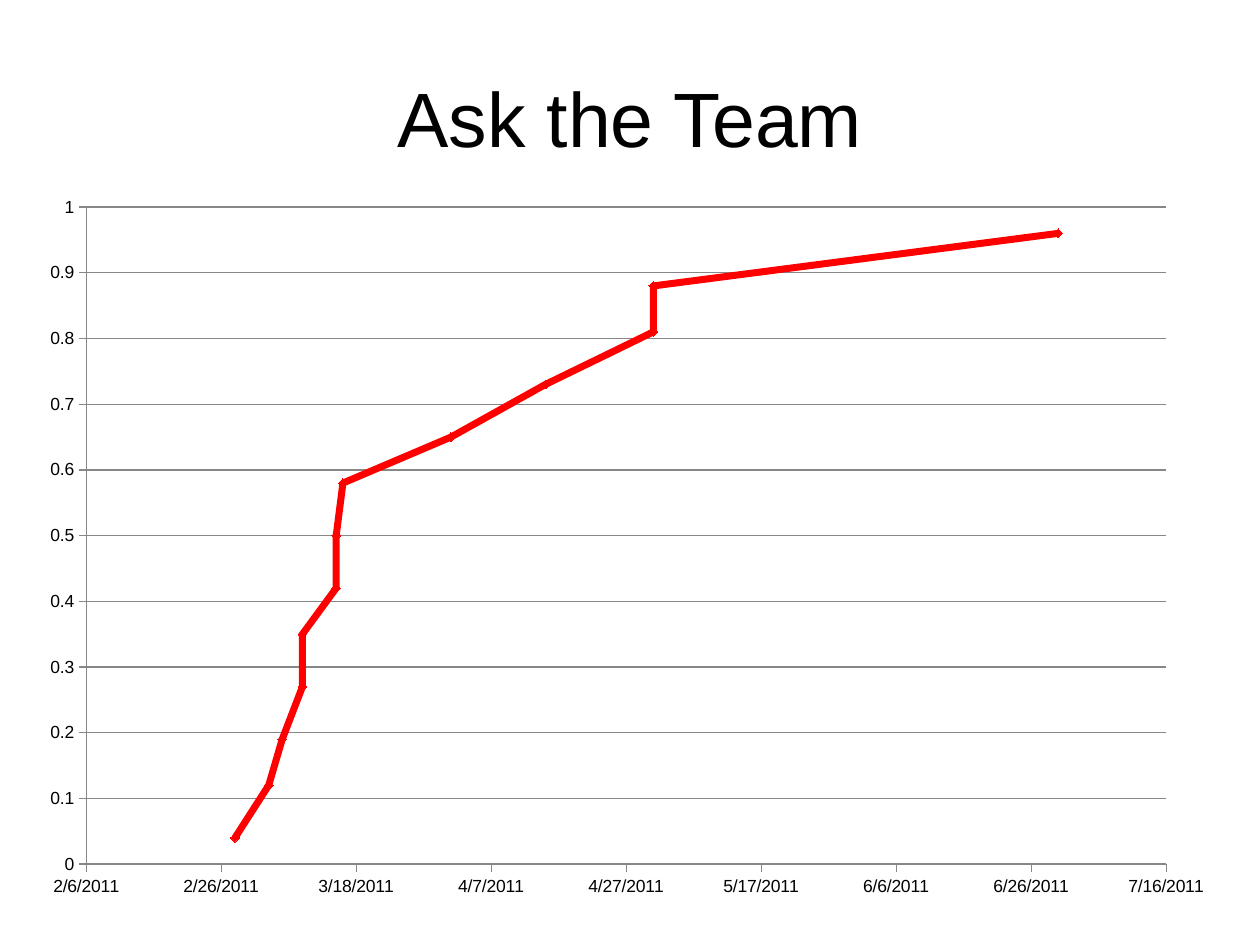
from lxml.etree import SubElement
from pptx import Presentation
from pptx.chart.data import XyChartData
from pptx.dml.color import RGBColor
from pptx.enum.chart import XL_CHART_TYPE as ChartType, XL_MARKER_STYLE as Marker
from pptx.enum.chart import XL_TICK_MARK as TickMark
from pptx.enum.text import MSO_ANCHOR as Anchor, PP_ALIGN as Align
from pptx.oxml.ns import qn
from pptx.util import Pt

# Content: days after the first date on the axis, share reached
TITLE = "Ask the Team"
FIRST_DATE = 40580  # 2/6/2011 as a date serial
DAYS_SHOWN, DAYS_PER_TICK = 160, 20
POINTS = [
    (22, 0.04), (27, 0.12), (29, 0.19), (32, 0.27), (32, 0.35),
    (37, 0.42), (37, 0.5), (38, 0.58), (54, 0.65), (68, 0.73),
    (84, 0.81), (84, 0.88), (144, 0.96),
]

THEME = {
    "font": "Arial",
    "title_size": Pt(44),
    "label_size": Pt(10),
    "text": RGBColor(0, 0, 0),
    "axis": RGBColor(0x87, 0x87, 0x87),
    "series": RGBColor(0xFF, 0, 0),
}
TITLE_BOX = (Pt(36), Pt(21.6), Pt(648), Pt(90))
CHART_BOX = (Pt(18.72), Pt(107.28), Pt(682.56), Pt(410.4))
PLOT_AREA = {"x": 0.045, "y": 0.027, "w": 0.904, "h": 0.915}


def style_font(font, size):
    font.name, font.size = THEME["font"], size
    font.color.rgb = THEME["text"]


def style_line(line, color, width):
    line.color.rgb, line.width = color, width


def style_axis(axis, low, high, step, number_format):
    axis.minimum_scale, axis.maximum_scale, axis.major_unit = low, high, step
    axis.major_tick_mark, axis.minor_tick_mark = TickMark.OUTSIDE, TickMark.NONE
    axis.tick_labels.number_format = number_format
    axis.tick_labels.number_format_is_linked = False
    style_font(axis.tick_labels.font, THEME["label_size"])
    style_line(axis.format.line, THEME["axis"], Pt(0.75))


def place_plot(chart):
    plot_area = chart.element.find(".//" + qn("c:plotArea"))
    layout = plot_area.find(qn("c:layout"))
    if layout is None:
        layout = SubElement(plot_area, qn("c:layout"))
        plot_area.insert(0, layout)
    manual = SubElement(layout, qn("c:manualLayout"))
    settings = {"layoutTarget": "inner", "xMode": "edge", "yMode": "edge", **PLOT_AREA}
    for tag, value in settings.items():
        SubElement(manual, qn("c:" + tag)).set("val", str(value))


presentation = Presentation()
presentation.slide_width, presentation.slide_height = Pt(720), Pt(540)
slide = presentation.slides.add_slide(presentation.slide_layouts[5])

# Title
title = slide.shapes.title
title.left, title.top, title.width, title.height = TITLE_BOX
title.text_frame.vertical_anchor = Anchor.MIDDLE
paragraph = title.text_frame.paragraphs[0]
paragraph.alignment = Align.CENTER
run = paragraph.add_run()
run.text = TITLE
style_font(run.font, THEME["title_size"])

# Chart
chart_data = XyChartData()
points = chart_data.add_series("Series 1")
for day, share in POINTS:
    points.add_data_point(FIRST_DATE + day, share)
chart = slide.shapes.add_chart(ChartType.XY_SCATTER_LINES, *CHART_BOX, chart_data).chart
chart.has_title = chart.has_legend = False
style_font(chart.font, THEME["label_size"])
place_plot(chart)

# Axes
style_axis(chart.category_axis, FIRST_DATE, FIRST_DATE + DAYS_SHOWN, DAYS_PER_TICK, "m/d/yyyy")
style_axis(chart.value_axis, 0, 1, 0.1, "General")
chart.category_axis.has_major_gridlines = False
chart.value_axis.has_major_gridlines = True
style_line(chart.value_axis.major_gridlines.format.line, THEME["axis"], Pt(0.75))

# Series
chart.plots[0].vary_by_categories = False
series = chart.plots[0].series[0]
series.smooth = False
style_line(series.format.line, THEME["series"], Pt(4))
series.marker.style, series.marker.size = Marker.DIAMOND, 5
series.marker.format.fill.solid()
series.marker.format.fill.fore_color.rgb = THEME["series"]
style_line(series.marker.format.line, THEME["series"], Pt(0.75))

presentation.save("out.pptx")
